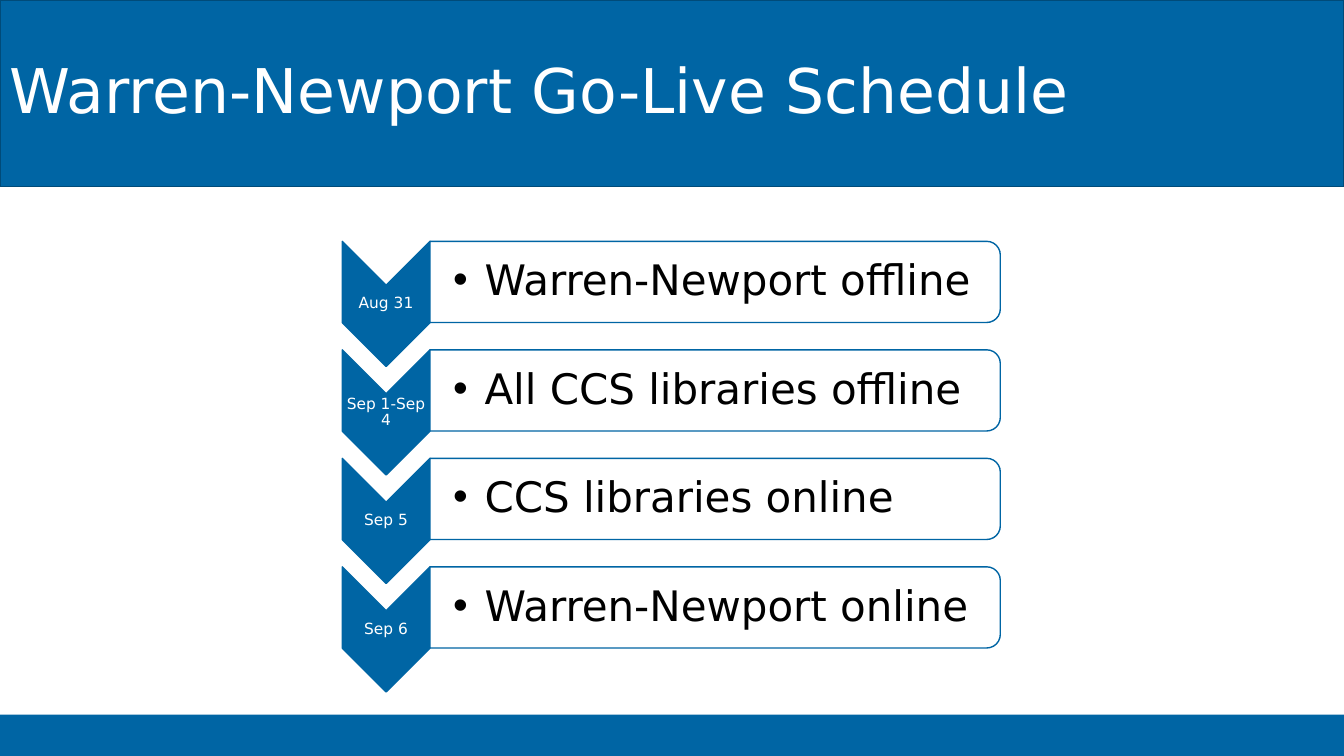
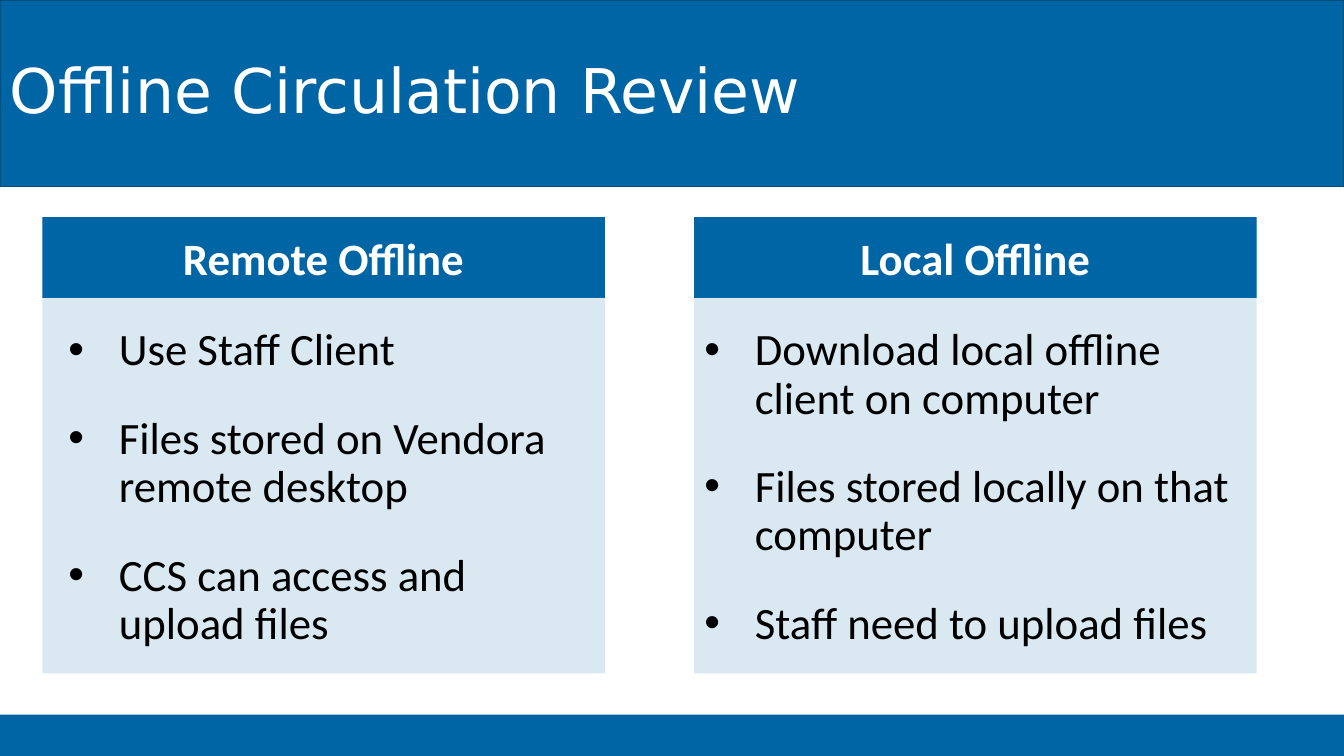
"""Build two slides: a go-live schedule and an offline circulation review."""
from lxml import etree
from pptx import Presentation
from pptx.dml.color import RGBColor
from pptx.enum.shapes import MSO_SHAPE
from pptx.enum.text import MSO_ANCHOR, PP_ALIGN
from pptx.oxml.ns import qn
from pptx.util import Pt

RECTANGLE = MSO_SHAPE.RECTANGLE
CHEVRON = MSO_SHAPE.CHEVRON
ROUNDED_END = MSO_SHAPE.ROUND_2_SAME_RECTANGLE
TOP, MIDDLE = MSO_ANCHOR.TOP, MSO_ANCHOR.MIDDLE
LEFT, CENTER = PP_ALIGN.LEFT, PP_ALIGN.CENTER

WIDTH, HEIGHT = 960, 540
BLUE, DARK_BLUE, PALE_BLUE = "0065A4", "004B79", "D9E8F1"
WHITE, BLACK = "FFFFFF", "000000"
SANS, BODY = "DejaVu Sans", "Calibri"
TITLE_HEIGHT, FOOTER_HEIGHT = 133.2, 29.5
INSETS = (7.2, 3.6, 7.2, 3.6)

SCHEDULE_TITLE = "Warren-Newport Go-Live Schedule"
SCHEDULE = [
    ("Aug 31", "Warren-Newport offline"),
    ("Sep 1-Sep 4", "All CCS libraries offline"),
    ("Sep 5", "CCS libraries online"),
    ("Sep 6", "Warren-Newport online"),
]
CHEVRON_LEFT, CHEVRON_WIDTH, CHEVRON_HEIGHT = 244.5, 62.6, 89.4
BAR_LEFT, BAR_WIDTH, BAR_HEIGHT = 307.1, 407.4, 58
FIRST_ROW, ROW_STEP = 172.4, 77.5

REVIEW_TITLE = "Offline Circulation Review"
REVIEW = [
    {
        "heading": "Remote Offline",
        "left": 30.2,
        "text_left": 41.8,
        "text_width": 390.2,
        "points": [
            "Use Staff Client",
            "Files stored on Vendora remote desktop",
            "CCS can access and upload files",
        ],
    },
    {
        "heading": "Local Offline",
        "left": 495.8,
        "text_left": 496.1,
        "text_width": 414.7,
        "points": [
            "Download local offline client on computer",
            "Files stored locally on that computer",
            "Staff need to upload files",
        ],
    },
]
PANEL_TOP, PANEL_WIDTH, PANEL_HEIGHT = 155.2, 401.8, 325.8
HEADING_HEIGHT = 57.6
POINTS_TOP, POINTS_HEIGHT, POINT_GAP = 230, 250, 28.6


def color(value):
    return RGBColor.from_string(value)


def add_block(slide, kind, left, top, width, height, fill, line=None, turned=False):
    """Add a shape that covers the given area, turned a quarter if asked."""
    if turned:
        left += (width - height) / 2
        top += (height - width) / 2
        width, height = height, width
    block = slide.shapes.add_shape(kind, Pt(left), Pt(top), Pt(width), Pt(height))
    block.rotation = 90 if turned else 0
    block.shadow.inherit = False
    block.fill.solid()
    block.fill.fore_color.rgb = color(fill)
    if line:
        block.line.color.rgb = color(line)
        block.line.width = Pt(1)
    else:
        block.line.fill.background()
    return block


def add_box(slide, left, top, width, height):
    return slide.shapes.add_textbox(Pt(left), Pt(top), Pt(width), Pt(height))


def add_bullet(para, indent):
    """Give a paragraph a hanging round bullet."""
    properties = para._p.get_or_add_pPr()
    properties.set("marL", str(Pt(indent)))
    properties.set("indent", str(-Pt(indent)))
    etree.SubElement(properties, qn("a:buFont"), typeface="Arial")
    etree.SubElement(properties, qn("a:buChar"), char="•")


def write(shape, lines, size, font, ink, align=LEFT, anchor=MIDDLE, insets=INSETS,
          bold=False, indent=0, gap=0, spacing=0.9):
    """Fill a shape with one paragraph per line."""
    frame = shape.text_frame
    frame.word_wrap = True
    frame.vertical_anchor = anchor
    (frame.margin_left, frame.margin_top,
     frame.margin_right, frame.margin_bottom) = map(Pt, insets)
    for index, line in enumerate(lines):
        para = frame.add_paragraph() if index else frame.paragraphs[0]
        if indent:
            add_bullet(para, indent)
        para.alignment = align
        para.line_spacing = spacing
        if index and gap:
            para.space_before = Pt(gap)
        span = para.add_run()
        span.text = line
        span.font.size = Pt(size)
        span.font.name = font
        span.font.bold = bold
        span.font.color.rgb = color(ink)


def add_page(deck, title):
    """Add a slide with the shared title band and footer band."""
    page = deck.slides.add_slide(deck.slide_layouts[6])
    add_block(page, RECTANGLE, 0, HEIGHT - FOOTER_HEIGHT, WIDTH, FOOTER_HEIGHT, BLUE)
    band = add_block(page, RECTANGLE, 0, 0, WIDTH, TITLE_HEIGHT, BLUE, DARK_BLUE)
    write(band, [title], 44, SANS, WHITE)
    return page


def build_schedule(deck):
    page = add_page(deck, SCHEDULE_TITLE)
    for row, (date, event) in enumerate(SCHEDULE):
        top = FIRST_ROW + row * ROW_STEP
        chevron = (CHEVRON_LEFT, top, CHEVRON_WIDTH, CHEVRON_HEIGHT)
        bar = (BAR_LEFT, top, BAR_WIDTH, BAR_HEIGHT)
        add_block(page, CHEVRON, *chevron, BLUE, BLUE, turned=True)
        write(add_box(page, *chevron), [date], 11, SANS, WHITE, CENTER,
              insets=(0.7, 0.7, 0.7, 0.7))
        add_block(page, ROUNDED_END, *bar, WHITE, BLUE, turned=True)
        write(add_box(page, *bar), [event], 30, SANS, BLACK,
              insets=(16.5, 1.4, 1.4, 1.4), indent=22.5)


def build_review(deck):
    page = add_page(deck, REVIEW_TITLE)
    for panel in REVIEW:
        left = panel["left"]
        add_block(page, RECTANGLE, left, PANEL_TOP, PANEL_WIDTH, PANEL_HEIGHT, PALE_BLUE)
        heading = add_block(page, RECTANGLE, left, PANEL_TOP, PANEL_WIDTH,
                            HEADING_HEIGHT, BLUE)
        write(heading, [panel["heading"]], 32, BODY, WHITE, CENTER, bold=True, spacing=1.0)
        points = add_box(page, panel["text_left"], POINTS_TOP,
                         panel["text_width"], POINTS_HEIGHT)
        write(points, panel["points"], 32, BODY, BLACK, anchor=TOP,
              indent=36, gap=POINT_GAP)


def main():
    deck = Presentation()
    deck.slide_width, deck.slide_height = Pt(WIDTH), Pt(HEIGHT)
    build_schedule(deck)
    build_review(deck)
    deck.save("out.pptx")


if __name__ == "__main__":
    main()
